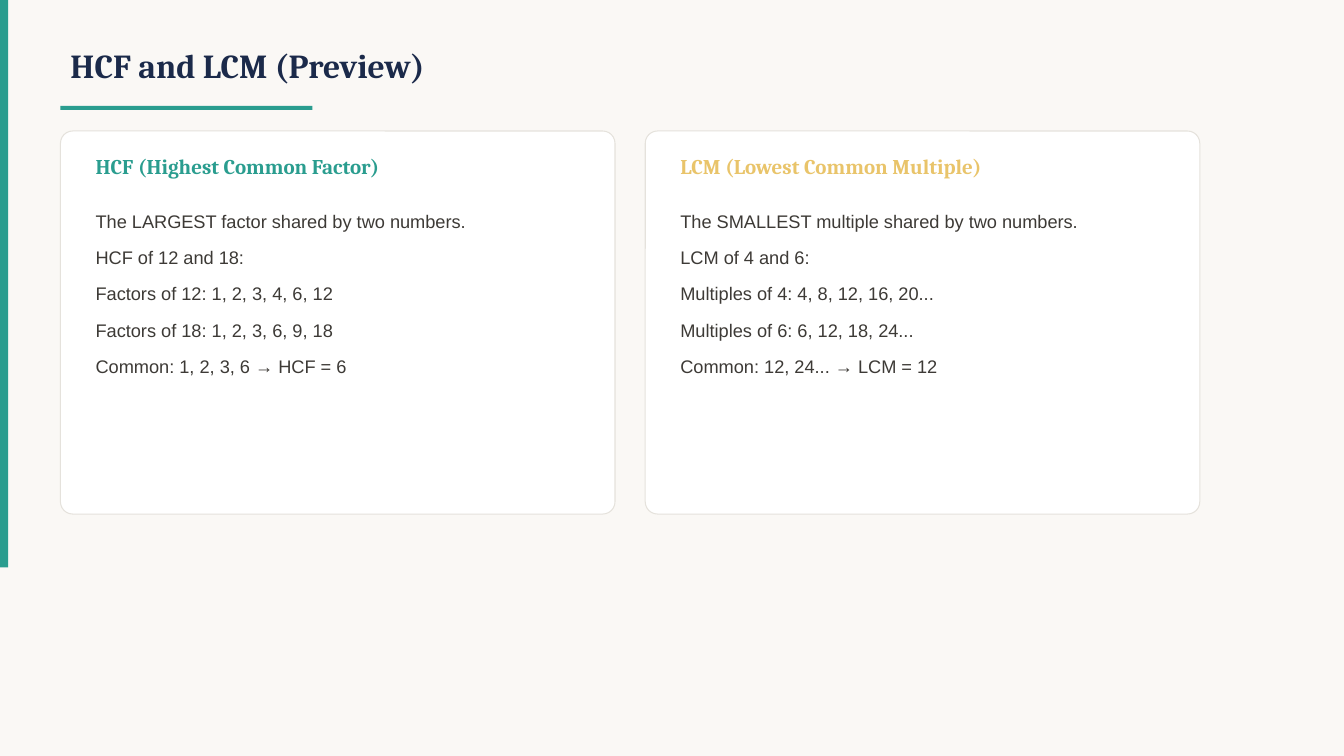
from dataclasses import dataclass

from pptx import Presentation
from pptx.dml.color import RGBColor
from pptx.enum.shapes import MSO_SHAPE
from pptx.enum.text import MSO_ANCHOR
from pptx.shapes.autoshape import Shape
from pptx.slide import Slide
from pptx.util import Inches, Pt

RECTANGLE = MSO_SHAPE.RECTANGLE
ROUNDED = MSO_SHAPE.ROUNDED_RECTANGLE
TOP = MSO_ANCHOR.TOP
MIDDLE = MSO_ANCHOR.MIDDLE

COLORS = {
    "background": "FAF8F5",
    "teal": "2A9D8F",
    "navy": "1B2A4A",
    "gold": "E9C46A",
    "white": "FFFFFF",
    "border": "E5E2DC",
    "body": "3D3A36",
}
TITLE_FONT = {"name": "Cambria", "size": Pt(24), "bold": True}
HEADING_FONT = {"name": "Cambria", "size": Pt(15), "bold": True}
BODY_FONT = {"name": "Arial", "size": Pt(13)}
BODY_SPACING = {"line_spacing": 1.4, "space_after": Pt(4)}

LEFT_MARGIN = 0.6
CARD_TOP, CARD_WIDTH, CARD_HEIGHT, CARD_GAP = 1.3, 5.5, 3.8, 0.3
CARD_PADDING = 0.25


@dataclass(frozen=True)
class Box:
    left: float
    top: float
    width: float
    height: float

    def lengths(self) -> list[Inches]:
        return [Inches(v) for v in (self.left, self.top, self.width, self.height)]


@dataclass(frozen=True)
class Card:
    heading: str
    color: str
    lines: list[str]


CARDS = [
    Card("HCF (Highest Common Factor)", "teal", [
        "The LARGEST factor shared by two numbers.",
        "HCF of 12 and 18:",
        "Factors of 12: 1, 2, 3, 4, 6, 12",
        "Factors of 18: 1, 2, 3, 6, 9, 18",
        "Common: 1, 2, 3, 6 → HCF = 6",
    ]),
    Card("LCM (Lowest Common Multiple)", "gold", [
        "The SMALLEST multiple shared by two numbers.",
        "LCM of 4 and 6:",
        "Multiples of 4: 4, 8, 12, 16, 20...",
        "Multiples of 6: 6, 12, 18, 24...",
        "Common: 12, 24... → LCM = 12",
    ]),
]


def rgb(color: str) -> RGBColor:
    return RGBColor.from_string(COLORS[color])


def apply_format(target: object, values: dict) -> None:
    for name, value in values.items():
        setattr(target, name, value)


def add_filled_shape(slide: Slide, kind: MSO_SHAPE, box: Box, color: str) -> Shape:
    """Add a solid shape without shadow or outline."""
    shape = slide.shapes.add_shape(kind, *box.lengths())
    shape.shadow.inherit = False
    shape.fill.solid()
    shape.fill.fore_color.rgb = rgb(color)
    shape.line.fill.background()
    return shape


def add_text(slide: Slide, box: Box, lines: list[str], font: dict, color: str,
             anchor: MSO_ANCHOR = MIDDLE, spacing: dict | None = None) -> None:
    """Add a wrapped text box with one paragraph per line."""
    frame = slide.shapes.add_textbox(*box.lengths()).text_frame
    apply_format(frame, {"word_wrap": True, "vertical_anchor": anchor})
    frame.text = "\n".join(lines)
    for paragraph in frame.paragraphs:
        apply_format(paragraph, spacing or {})
        for run in paragraph.runs:
            apply_format(run.font, font)
            run.font.color.rgb = rgb(color)


def add_card(slide: Slide, card: Card, left: float) -> None:
    panel = add_filled_shape(
        slide, ROUNDED, Box(left, CARD_TOP, CARD_WIDTH, CARD_HEIGHT), "white")
    panel.adjustments[0] = 0.032
    panel.line.color.rgb = rgb("border")
    panel.line.width = Pt(0.75)

    text_left = left + CARD_PADDING
    text_width = CARD_WIDTH - 2 * CARD_PADDING
    add_text(slide, Box(text_left, CARD_TOP + 0.15, text_width, 0.4),
             [card.heading], HEADING_FONT, card.color)
    add_text(slide, Box(text_left, CARD_TOP + 0.65, text_width, 2.9),
             card.lines, BODY_FONT, "body", TOP, BODY_SPACING)


def main() -> None:
    presentation = Presentation()
    presentation.slide_width = Inches(13.33)
    presentation.slide_height = Inches(7.5)
    slide = presentation.slides.add_slide(presentation.slide_layouts[6])
    slide.background.fill.solid()
    slide.background.fill.fore_color.rgb = rgb("background")

    add_filled_shape(slide, RECTANGLE, Box(0, 0, 0.08, 5.63), "teal")
    add_text(slide, Box(LEFT_MARGIN, 0.3, 10, 0.7),
             ["HCF and LCM (Preview)"], TITLE_FONT, "navy")
    add_filled_shape(slide, RECTANGLE, Box(LEFT_MARGIN, 1.05, 2.5, 0.04), "teal")
    for index, card in enumerate(CARDS):
        add_card(slide, card, LEFT_MARGIN + index * (CARD_WIDTH + CARD_GAP))

    presentation.save("out.pptx")


if __name__ == "__main__":
    main()
